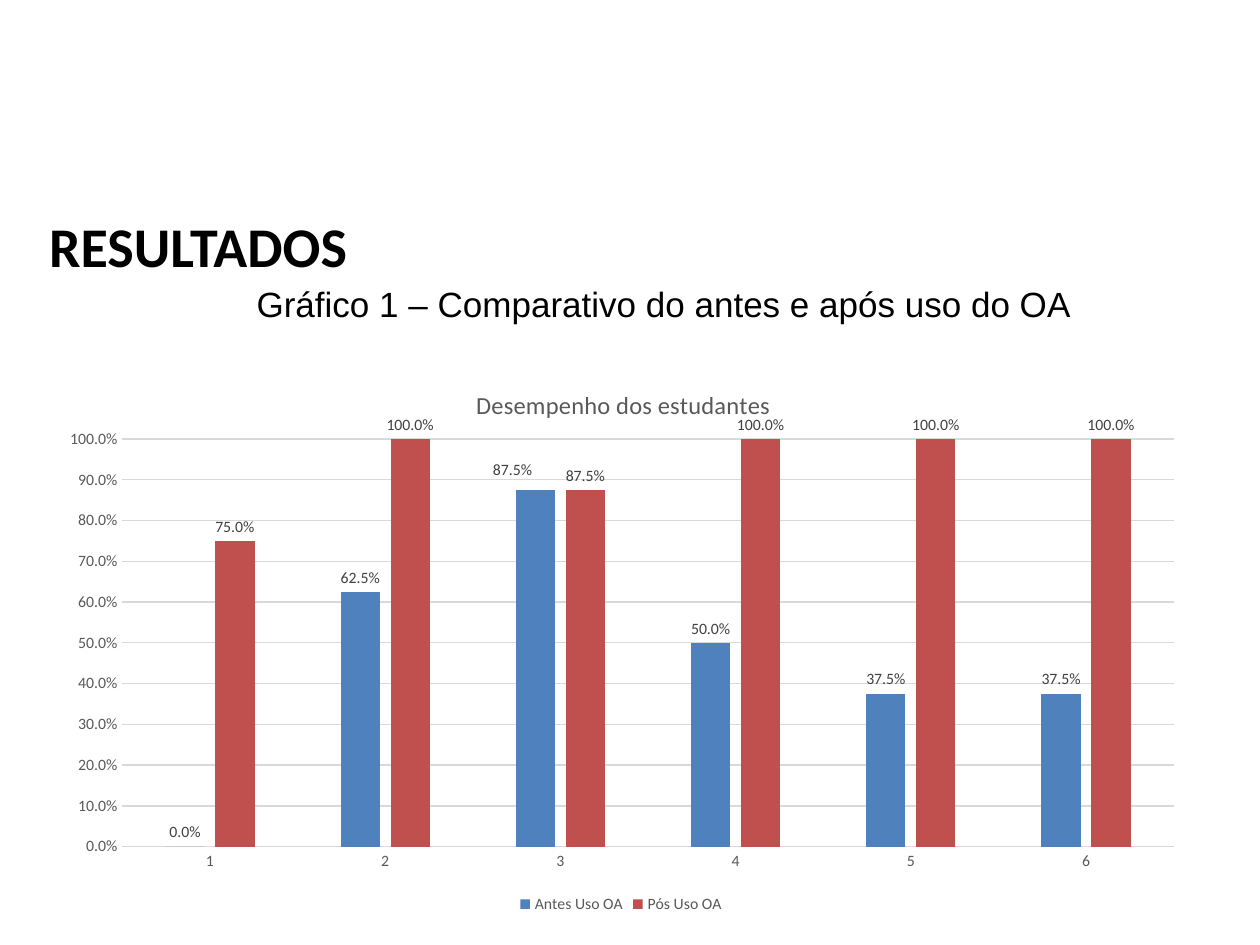
from dataclasses import dataclass

from lxml.etree import SubElement
from pptx import Presentation
from pptx.chart.data import CategoryChartData
from pptx.dml.color import RGBColor as RGB
from pptx.enum.chart import (
    XL_CHART_TYPE as ChartType,
    XL_LABEL_POSITION as LabelPos,
    XL_LEGEND_POSITION as LegendPos,
    XL_TICK_MARK as Tick,
)
from pptx.enum.text import MSO_ANCHOR as Anchor, PP_ALIGN as Align
from pptx.oxml.ns import qn
from pptx.util import Pt

HEADING = "RESULTADOS"
CAPTION = "Gráfico 1 – Comparativo do antes e após uso do OA"
CHART_TITLE = "Desempenho dos estudantes"
QUESTIONS = ["1", "2", "3", "4", "5", "6"]
SCORES = {
    "Antes Uso OA": [0, 0.625, 0.875, 0.5, 0.375, 0.375],
    "Pós Uso OA": [0.75, 1, 0.875, 1, 1, 1],
}
PERCENT = "0.0%"


@dataclass(frozen=True)
class Theme:
    sans: str = "Calibri"
    caption_font: str = "Arial"
    ink: str = "000000"
    muted: str = "595959"
    label: str = "404040"
    grid: str = "D9D9D9"
    bars: tuple = ("4F81BD", "C0504D")
    heading_size: int = 32
    caption_size: int = 20
    chart_title_size: int = 14
    chart_size: int = 10
    small_size: int = 9


THEME = Theme()


def style(font, size=THEME.small_size, color=THEME.muted, name=THEME.sans, bold=False):
    font.size, font.name, font.bold = Pt(size), name, bold
    font.color.rgb = RGB.from_string(color)


def write(frame, text, align=Align.LEFT, anchor=Anchor.TOP, indent=0, **font):
    frame.text = text
    frame.word_wrap = True
    frame.vertical_anchor = anchor
    paragraph = frame.paragraphs[0]
    paragraph.alignment = align
    paragraph.space_before = Pt(0)
    if indent:
        properties = paragraph._p.get_or_add_pPr()
        properties.set("marL", "0")
        properties.set("indent", str(Pt(indent)))
    style(paragraph.runs[0].font, **font)


def move(shape, left, top, width, height):
    shape.left, shape.top = Pt(left), Pt(top)
    shape.width, shape.height = Pt(width), Pt(height)


def set_layout(parent, position, **settings):
    for old in parent.findall(qn("c:layout")):
        parent.remove(old)
    layout = SubElement(parent, qn("c:layout"))
    manual = SubElement(layout, qn("c:manualLayout"))
    for key, value in settings.items():
        SubElement(manual, qn(f"c:{key}")).set("val", str(value))
    parent.insert(position, layout)


def hairline(line):
    line.color.rgb = RGB.from_string(THEME.grid)
    line.width = Pt(0.75)


def add_scores(slide):
    data = CategoryChartData(number_format=PERCENT)
    data.categories = QUESTIONS
    for name, values in SCORES.items():
        data.add_series(name, values)
    chart = slide.shapes.add_chart(
        ChartType.COLUMN_CLUSTERED, Pt(26.6), Pt(203), Pt(656.6), Pt(321.8), data
    ).chart
    style(chart.font, size=THEME.chart_size, color=THEME.ink)

    chart.has_title = True
    write(chart.chart_title.text_frame, CHART_TITLE, align=Align.CENTER,
          size=THEME.chart_title_size)
    chart.has_legend = True
    chart.legend.position = LegendPos.BOTTOM
    chart.legend.include_in_layout = False
    style(chart.legend.font)

    for axis in (chart.category_axis, chart.value_axis):
        axis.major_tick_mark = axis.minor_tick_mark = Tick.NONE
        style(axis.tick_labels.font)
    hairline(chart.category_axis.format.line)
    scale = chart.value_axis
    scale.minimum_scale, scale.maximum_scale, scale.major_unit = 0, 1, 0.1
    scale.tick_labels.number_format = PERCENT
    scale.tick_labels.number_format_is_linked = False
    scale.format.line.fill.background()
    hairline(scale.major_gridlines.format.line)

    plot = chart.plots[0]
    plot.gap_width, plot.overlap = 219, -27
    plot.vary_by_categories = False
    for series, color in zip(plot.series, THEME.bars):
        series.format.fill.solid()
        series.format.fill.fore_color.rgb = RGB.from_string(color)
        series.invert_if_negative = False
        labels = series.data_labels
        labels.show_value = True
        labels.number_format = PERCENT
        labels.number_format_is_linked = False
        labels.position = LabelPos.OUTSIDE_END
        style(labels.font, color=THEME.label)

    shifted = plot.series[0].points[2].data_label
    shifted.position = LabelPos.OUTSIDE_END
    style(shifted.font, color=THEME.label)

    root = chart._chartSpace
    set_layout(root.xpath(".//c:dLbl")[0], 1, x=-0.02, y=-0.01)
    set_layout(root.xpath("c:chart/c:title")[0], 1,
               xMode="edge", yMode="edge", x=0.37, y=0.05)
    set_layout(root.xpath(".//c:plotArea")[0], 0, layoutTarget="inner",
               xMode="edge", yMode="edge", x=0.066, y=0.149, w=0.915, h=0.724)


def main():
    deck = Presentation()
    deck.slide_width, deck.slide_height = Pt(720), Pt(540)
    slide = deck.slides.add_slide(deck.slide_layouts[0])
    heading, caption = slide.placeholders
    move(heading, 20.9, 117.4, 679, 46)
    write(heading.text_frame, HEADING, size=THEME.heading_size, color=THEME.ink, bold=True)
    move(caption, 18.7, 157.7, 679, 31.5)
    write(caption.text_frame, CAPTION, align=Align.CENTER, anchor=Anchor.MIDDLE, indent=42.5,
          size=THEME.caption_size, color=THEME.ink, name=THEME.caption_font)
    add_scores(slide)
    deck.save("out.pptx")


if __name__ == "__main__":
    main()
